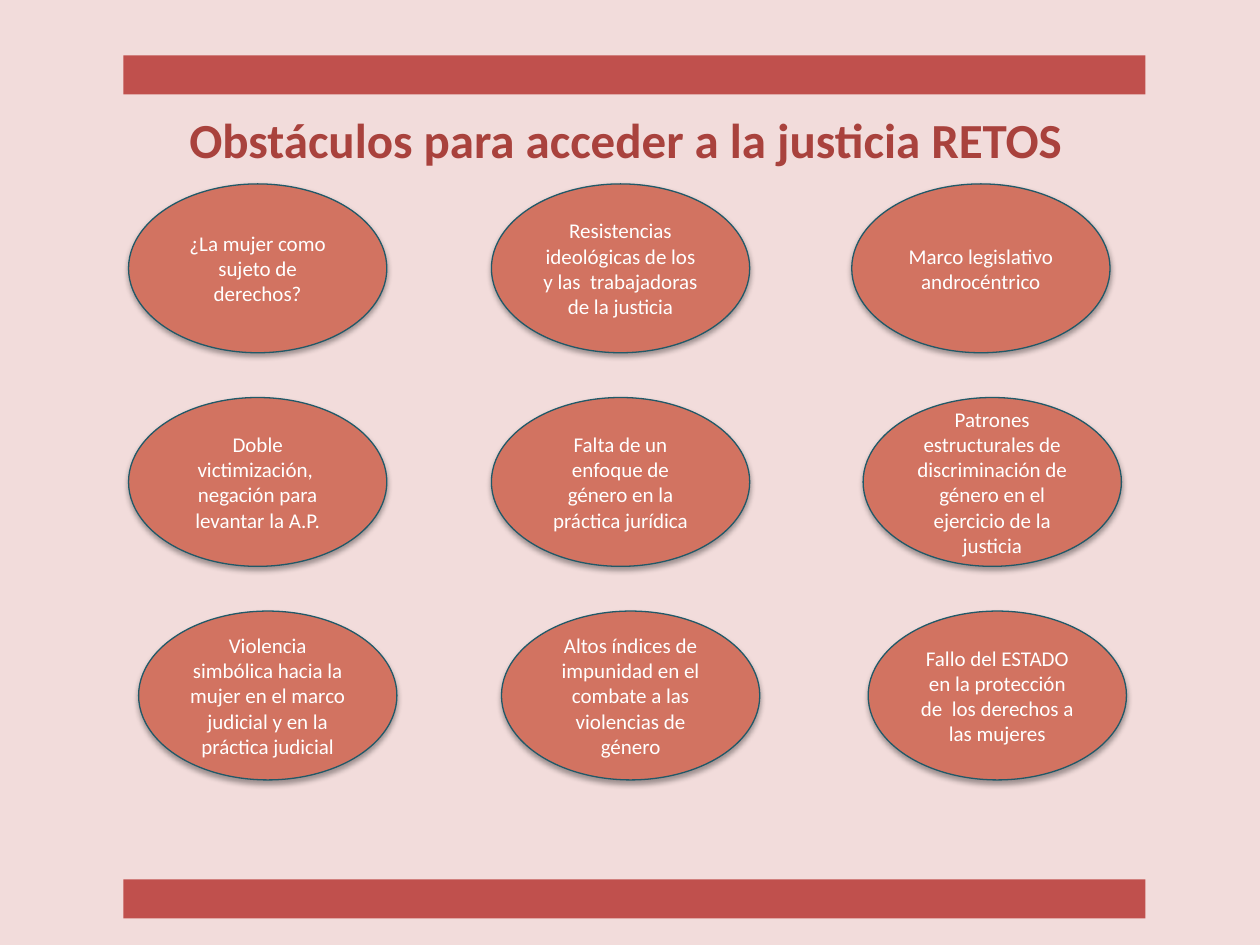
from dataclasses import dataclass

from lxml import etree
from pptx import Presentation
from pptx.dml.color import RGBColor
from pptx.enum.shapes import MSO_SHAPE
from pptx.enum.text import MSO_ANCHOR, MSO_AUTO_SIZE, PP_ALIGN
from pptx.oxml.ns import qn
from pptx.util import Inches, Pt

OVAL, RECTANGLE = MSO_SHAPE.OVAL, MSO_SHAPE.RECTANGLE
MIDDLE, TOP = MSO_ANCHOR.MIDDLE, MSO_ANCHOR.TOP
CENTER = PP_ALIGN.CENTER
GROW = MSO_AUTO_SIZE.SHAPE_TO_FIT_TEXT
TITLE_ONLY = 5


@dataclass(frozen=True)
class Theme:
    """Colours, font and type sizes of the deck."""
    background: str = "F2DCDB"
    bar: str = "C0504D"
    title: str = "A9423D"
    oval: str = "D27361"
    outline: str = "215968"
    oval_text: str = "FFFFFF"
    shadow: str = "000000"
    font: str = "Calibri"
    title_size: int = 28
    oval_size: int = 12


THEME = Theme()
TITLE = "Obstáculos para acceder a la justicia RETOS"
OBSTACLES = [
    ["¿La mujer como sujeto de derechos?",
     "Resistencias ideológicas de los y las  trabajadoras de la justicia",
     "Marco legislativo androcéntrico"],
    ["Doble victimización,  negación para levantar la A.P.",
     "Falta de un enfoque de género en la práctica jurídica",
     "Patrones estructurales de discriminación de género en el ejercicio de la justicia"],
    ["Violencia simbólica hacia la mujer en el marco judicial y en la práctica judicial",
     "Altos índices de impunidad en el combate a las violencias de género",
     "Fallo del ESTADO en la protección de  los derechos a las mujeres"],
]
NUDGES = [(0, 0, -0.02), (0, 0, 0.07), (0.08, 0.08, 0.11)]


def paint(shape, color):
    """Give a shape a solid fill."""
    shape.fill.solid()
    shape.fill.fore_color.rgb = RGBColor.from_string(color)


def write(shape, text, size, color, anchor, bold=False):
    """Put one centred paragraph into a shape."""
    frame = shape.text_frame
    frame.text = text
    frame.word_wrap = True
    frame.vertical_anchor = anchor
    para = frame.paragraphs[0]
    para.alignment = CENTER
    para.font.name = THEME.font
    para.font.size = Pt(size)
    para.font.bold = bold
    para.font.color.rgb = RGBColor.from_string(color)


def cast_shadow(shape):
    """Add a soft shadow just below a shape."""
    shape.shadow.inherit = False
    effects = shape.element.spPr.find(qn("a:effectLst"))
    shadow = etree.SubElement(
        effects, qn("a:outerShdw"), blurRad=str(Pt(3.1)), dist=str(Pt(1.8)),
        dir="5400000", rotWithShape="0")
    color = etree.SubElement(shadow, qn("a:srgbClr"), val=THEME.shadow)
    etree.SubElement(color, qn("a:alpha"), val="35000")


def add_oval(page, box, text):
    """Draw one obstacle as a labelled oval."""
    oval = page.shapes.add_shape(OVAL, *map(Inches, box))
    paint(oval, THEME.oval)
    oval.line.color.rgb = RGBColor.from_string(THEME.outline)
    oval.line.width = Pt(0.75)
    cast_shadow(oval)
    write(oval, text, THEME.oval_size, THEME.oval_text, MIDDLE)


def add_obstacles(page, box):
    """Spread the ovals over a grid whose rows shift slightly sideways."""
    left, top, width, height = box
    oval_width, oval_height = 2.05, 1.34
    column_step = (width - oval_width) / (len(OBSTACLES[0]) - 1)
    row_step = (height - oval_height) / (len(OBSTACLES) - 1)
    for row, (texts, nudges) in enumerate(zip(OBSTACLES, NUDGES)):
        for column, (text, nudge) in enumerate(zip(texts, nudges)):
            place = (left + column * column_step + nudge, top + row * row_step,
                     oval_width, oval_height)
            add_oval(page, place, text)


def add_title(page, box):
    """Place and format the title placeholder."""
    title = page.shapes.title
    title.left, title.top, title.width, title.height = map(Inches, box)
    write(title, TITLE, THEME.title_size, THEME.title, TOP, bold=True)
    title.text_frame.auto_size = GROW


def add_bars(page, box):
    """Draw bars along the top and bottom edges of the box."""
    left, top, width, height = box
    thickness = 0.31
    for bar_top in (top, top + height - thickness):
        bar = page.shapes.add_shape(
            RECTANGLE, *map(Inches, (left, bar_top, width, thickness)))
        paint(bar, THEME.bar)
        bar.line.fill.background()
        bar.shadow.inherit = False


def main():
    """Build the slide and save the deck."""
    deck = Presentation()
    deck.slide_width, deck.slide_height = Inches(10), Inches(7.5)
    page = deck.slides.add_slide(deck.slide_layouts[TITLE_ONLY])
    paint(page.background, THEME.background)
    add_title(page, (1.15, 0.82, 7.63, 0.57))
    add_obstacles(page, (1.02, 1.46, 7.81, 4.73))
    add_bars(page, (0.98, 0.44, 8.11, 6.85))
    deck.save("out.pptx")


if __name__ == "__main__":
    main()
